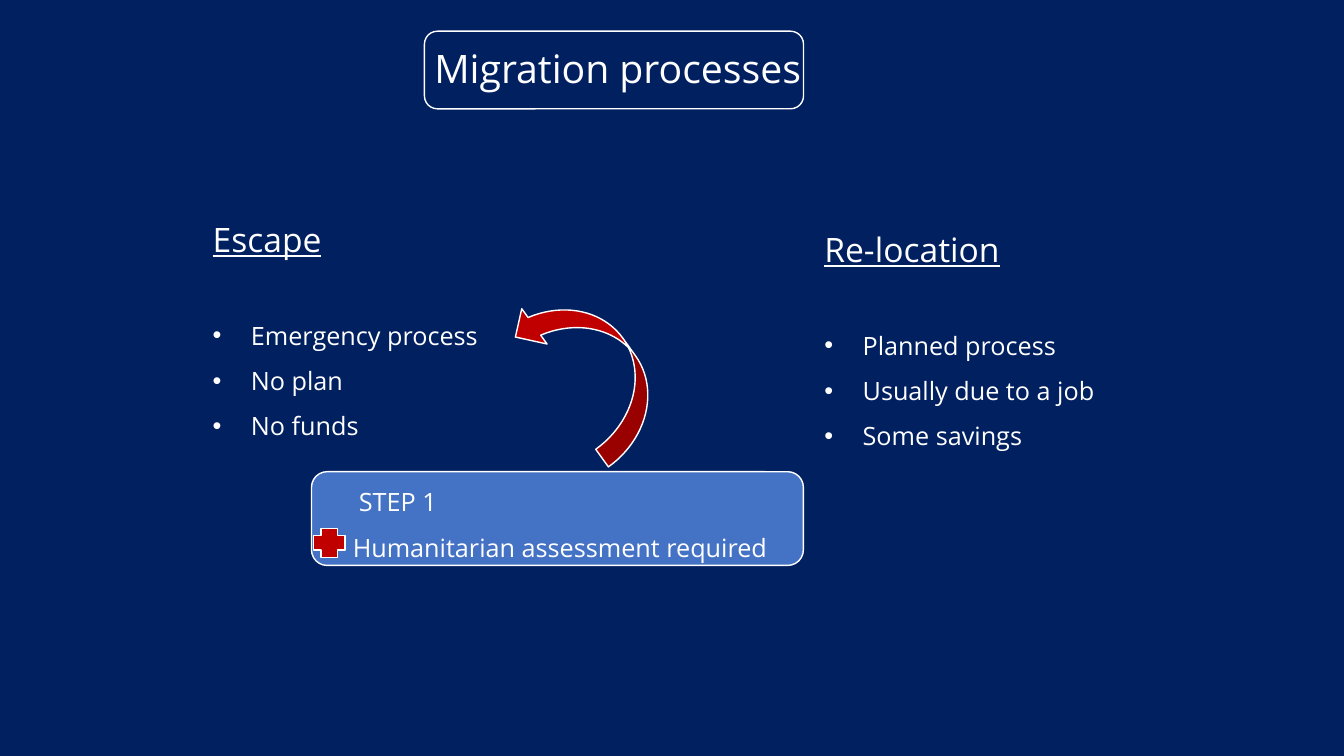
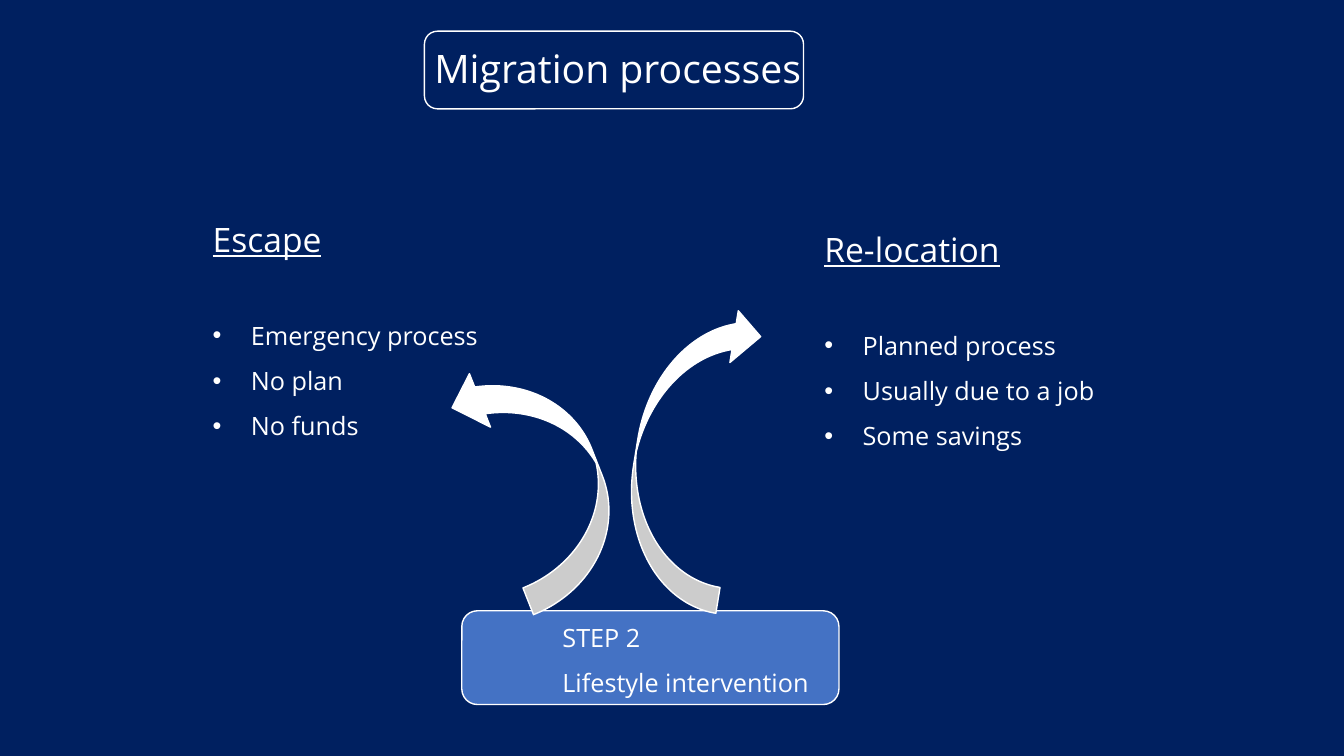
from pptx import Presentation
from pptx import util as u
from pptx.dml import color
from pptx.enum import shapes
from lxml import etree

WIDE, HIGH = u.Inches(13.33), u.Inches(7.5)
NAVY, BLUE, RED, WHITE = "002060", "4472C4", "C00000", "FFFFFF"
TITLE = {"size": u.Pt(28)}
HEAD = {"size": u.Pt(24), "underline": True}
BODY = {"size": u.Pt(18)}
LOOSE = {"line_spacing": 1.5}
ROUND = shapes.MSO_SHAPE.ROUNDED_RECTANGLE
CROSS = shapes.MSO_SHAPE.CROSS
UP = shapes.MSO_SHAPE.CURVED_UP_ARROW
DOWN = shapes.MSO_SHAPE.CURVED_DOWN_ARROW


def rgb(code):
    return color.RGBColor.from_string(code)


def place(box):
    """Turn (left, top, width, height) in percent of the slide into lengths."""
    x, y, w, h = box
    return [round(v * full / 100) for v, full in
            ((x, WIDE), (y, HIGH), (w, WIDE), (h, HIGH))]


def inside(box, dx, dy, w=None, h=None):
    """Box offset from another's corner; by default it ends where that one does."""
    x, y, bw, bh = box
    return x + dx, y + dy, w or bw - dx, h or bh - dy


def shape(slide, kind, box, fill=None, turn=0):
    item = slide.shapes.add_shape(kind, *place(box))
    item.shadow.inherit = False
    item.rotation = turn
    if fill:
        item.fill.solid()
        item.fill.fore_color.rgb = rgb(fill)
    else:
        item.fill.background()
    item.line.color.rgb = rgb(WHITE)
    item.line.width = u.Pt(1)


def frame(slide, box):
    area = slide.shapes.add_textbox(*place(box)).text_frame
    area.word_wrap = True
    return area


def write(para, words, font, form=None):
    run = para.add_run()
    run.text = words
    for key, val in {"name": "Open Sans", **font}.items():
        setattr(run.font, key, val)
    run.font.color.rgb = rgb(WHITE)
    for key, val in (form or {}).items():
        setattr(para, key, val)


def indent(para, left, first=0, mark=None):
    props = para._p.get_or_add_pPr()
    props.set("marL", str(u.Inches(left)))
    props.set("indent", str(u.Inches(first)))
    if mark:
        ns = "{http://schemas.openxmlformats.org/drawingml/2006/main}"
        etree.SubElement(props, ns + "buFont").set("typeface", "Arial")
        etree.SubElement(props, ns + "buChar").set("char", mark)


# Title: outlined frame with the text on it
def title(slide, box, words):
    write(frame(slide, inside(box, 0, 1.07, 33.23, 7.6)).paragraphs[0], words, TITLE)
    shape(slide, ROUND, box)


# Column: underlined heading over a bullet list
def column(slide, box, head, items):
    area = frame(slide, box)
    write(area.paragraphs[0], head, HEAD, {"space_after": u.Pt(32.7)})
    for words in items:
        para = area.add_paragraph()
        write(para, words, BODY, LOOSE)
        indent(para, 0.38, -0.38, "•")


# Step: filled box with its number and action
def step(slide, box, shift, lines, inset=0):
    shape(slide, ROUND, box, BLUE)
    area = frame(slide, inside(box, *shift))
    first, last = area.paragraphs[0], area.add_paragraph()
    for para, words in zip((first, last), lines):
        write(para, words, BODY, LOOSE)
    indent(first, inset)


# Parts shared by every slide
def base(deck):
    slide = deck.slides.add_slide(deck.slide_layouts[6])
    title(slide, (31.58, 4.13, 28.21, 10.27), "Migration processes")
    column(slide, (15.08, 28.27, 24.4, 29.6), "Escape",
           ("Emergency process", "No plan", "No funds"))
    column(slide, (60.6, 29.6, 22.6, 29.6), "Re-location",
           ("Planned process", "Usually due to a job", "Some savings"))
    return slide


def assess(deck):
    slide = base(deck)
    box = (23.18, 62.4, 36.6, 12.4)
    step(slide, box, (2.33, -0.67),
         ("STEP 1", "Humanitarian assessment required"), 0.06)
    shape(slide, CROSS, inside(box, 0.15, 7.47, 2.33, 3.87), RED)
    shape(slide, UP, (37.21, 42.93, 13.5, 11.47), RED, 234.4)


def treat(deck):
    slide = base(deck)
    step(slide, (34.36, 80.8, 28.06, 12.4), (6.75, -1.2),
         ("STEP 2", "Lifestyle intervention"))
    shape(slide, UP, (30.91, 55.47, 18.68, 15.2), WHITE, 248.5)
    shape(slide, DOWN, (39.83, 53.07, 22.81, 13.87), WHITE, 279.2)


def main():
    deck = Presentation()
    deck.slide_width, deck.slide_height = WIDE, HIGH
    back = deck.slide_master.background.fill
    back.solid()
    back.fore_color.rgb = rgb(NAVY)
    assess(deck)
    treat(deck)
    deck.save("out.pptx")


if __name__ == "__main__":
    main()
